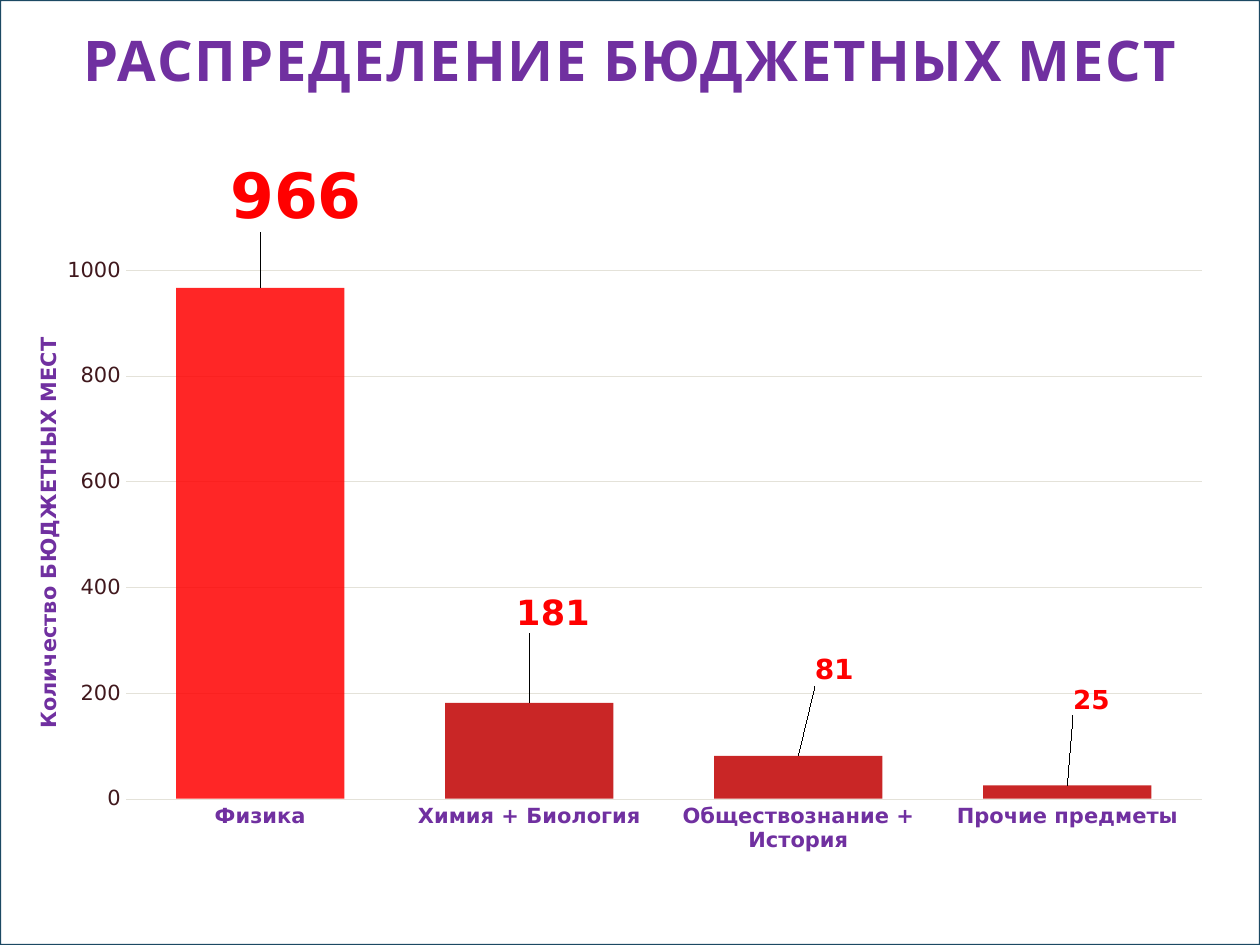
import pptx
import pptx.chart.data
import pptx.dml.color
import pptx.enum.chart
import pptx.enum.dml
import pptx.enum.shapes
import pptx.enum.text
import pptx.oxml
import pptx.oxml.ns
import pptx.util

RGBColor = pptx.dml.color.RGBColor
WHITE = RGBColor(0xFF, 0xFF, 0xFF)
NAVY = RGBColor(0x04, 0x36, 0x53)
PURPLE = RGBColor(0x70, 0x30, 0xA0)
RED = RGBColor(0xFF, 0x00, 0x00)
DARK_RED = RGBColor(0xC0, 0x00, 0x00)
BROWN = RGBColor(0x6D, 0x52, 0x25)
MAROON = RGBColor(0x40, 0x18, 0x1D)
INK = RGBColor(0x2E, 0x2B, 0x21)
GRID = RGBColor(0xE4, 0xE2, 0xD9)

TITLE_FONT = "Cabin"
CHART_FONT = "DejaVu Sans"
PX = pptx.util.Inches(1) // 126
PLOT_AREA = {"x": 0.08, "y": 0.07, "w": 0.9, "h": 0.81}
SUBJECTS = [
    ("Физика", 966, RED, 36, 0.03, -0.07),
    ("Химия + Биология", 181, DARK_RED, 20, 0.02, -0.09),
    ("Обществознание + История", 81, DARK_RED, 16, 0.03, -0.09),
    ("Прочие предметы", 25, DARK_RED, 15, 0.02, -0.09),
]


def place(shape, left, top, width, height):
    """Position a shape in px."""
    box = {"left": left, "top": top, "width": width, "height": height}
    for name, value in box.items():
        setattr(shape, name, value * PX)


def style_font(font, size, color, name=CHART_FONT, bold=False):
    """Apply size, colour, typeface and weight to a font."""
    values = {"size": pptx.util.Pt(size), "name": name, "bold": bold}
    for attribute, value in values.items():
        setattr(font, attribute, value)
    font.color.rgb = color


def paint(fill, color, opacity=100):
    """Give a fill a solid colour with an opacity in percent."""
    fill.solid()
    fill.fore_color.rgb = color
    if opacity < 100:
        set_opacity(fill.fore_color, fill, opacity)


def set_opacity(color, fill, opacity):
    """Add an alpha value to a solid colour."""
    holder = fill._xPr.find(".//" + pptx.oxml.ns.qn("a:srgbClr"))
    alpha = pptx.oxml.parse_xml(
        f'<a:alpha {pptx.oxml.ns.nsdecls("a")} val="{opacity * 1000}"/>')
    holder.append(alpha)


def manual_layout(values, modes):
    """Build a chart layout element from fractions of the chart."""
    parts = "".join(f'<c:{name} val="{value}"/>'
                    for name, value in [*modes.items(), *values.items()])
    return pptx.oxml.parse_xml(
        f'<c:layout {pptx.oxml.ns.nsdecls("c")}>'
        f"<c:manualLayout>{parts}</c:manualLayout></c:layout>")


def add_frame(slide, title):
    """Draw the outlined background behind the title."""
    frame = slide.shapes.add_shape(
        pptx.enum.shapes.MSO_SHAPE.RECTANGLE, 0, 0, 1260 * PX, 945 * PX)
    frame.shadow.inherit = False
    paint(frame.fill, WHITE)
    frame.line.width = pptx.util.Pt(1.25)
    paint(frame.line.fill, NAVY, 90)
    title.element.addprevious(frame.element)


def format_title(title, text):
    """Write and style the slide title."""
    place(title, 16, 19, 1228, 81)
    frame = title.text_frame
    frame.word_wrap = True
    frame.auto_size = pptx.enum.text.MSO_AUTO_SIZE.SHAPE_TO_FIT_TEXT
    paragraph = frame.paragraphs[0]
    paragraph.alignment = pptx.enum.text.PP_ALIGN.CENTER
    run = paragraph.add_run()
    run.text = text
    style_font(run.font, 32, PURPLE, TITLE_FONT, True)
    run.font._element.set("spc", "100")


def format_axis(axis, color, bold):
    """Hide an axis line and its ticks, and style its labels."""
    none = pptx.enum.chart.XL_TICK_MARK.NONE
    for name in ("major_tick_mark", "minor_tick_mark"):
        setattr(axis, name, none)
    axis.format.line.fill.background()
    style_font(axis.tick_labels.font, 12, color, bold=bold)


def format_value_axis(axis):
    """Set the scale, gridlines and title of the value axis."""
    format_axis(axis, MAROON, False)
    scale = {"minimum_scale": 0, "maximum_scale": 1100, "major_unit": 200}
    for name, value in scale.items():
        setattr(axis, name, value)
    line = axis.major_gridlines.format.line
    line.width = pptx.util.Pt(0.1)
    line.color.rgb = GRID
    paragraph = axis.axis_title.text_frame.paragraphs[0]
    run = paragraph.add_run()
    run.text = "Количество БЮДЖЕТНЫХ МЕСТ"
    style_font(run.font, 12, PURPLE, bold=True)


def format_points(series):
    """Colour each bar and move its value label."""
    paint(series.format.fill, BROWN, 85)
    labels = series.data_labels
    labels.show_value = True
    style_font(labels.font, 15, RED, bold=True)
    for index, (_, _, color, size, x, y) in enumerate(SUBJECTS):
        point = series.points[index]
        paint(point.format.fill, color, 85)
        label = point.data_label
        style_font(label.font, size, RED, bold=True)
        label.position = pptx.enum.chart.XL_LABEL_POSITION.OUTSIDE_END
        element = labels._element.findall(pptx.oxml.ns.qn("c:dLbl"))[index]
        element.insert(1, manual_layout({"x": x, "y": y}, {}))


def add_places_chart(slide):
    """Add the column chart of places by subject."""
    data = pptx.chart.data.CategoryChartData()
    data.categories = [subject[0] for subject in SUBJECTS]
    data.add_series("Series 1", [subject[1] for subject in SUBJECTS])
    kind = pptx.enum.chart.XL_CHART_TYPE.COLUMN_CLUSTERED
    graphic = slide.shapes.add_chart(kind, 0, 0, PX, PX, data)
    place(graphic, 30, 160, 1196, 725)
    chart = graphic.chart
    chart.has_legend = False
    chart.has_title = False
    style_font(chart.font, 10, INK, TITLE_FONT)
    plot = chart.plots[0]
    plot.gap_width = 60
    plot.vary_by_categories = False
    format_axis(chart.category_axis, PURPLE, True)
    format_value_axis(chart.value_axis)
    format_points(plot.series[0])
    area = chart._chartSpace.chart.plotArea
    for layout in area.findall(pptx.oxml.ns.qn("c:layout")):
        area.remove(layout)
    modes = {"layoutTarget": "inner", "xMode": "edge", "yMode": "edge"}
    area.insert(0, manual_layout(PLOT_AREA, modes))


def main():
    """Build and save the slide."""
    presentation = pptx.Presentation()
    presentation.slide_width = 1260 * PX
    presentation.slide_height = 945 * PX
    slide = presentation.slides.add_slide(presentation.slide_layouts[5])
    title = slide.shapes.title
    add_frame(slide, title)
    format_title(title, "РАСПРЕДЕЛЕНИЕ БЮДЖЕТНЫХ МЕСТ")
    add_places_chart(slide)
    presentation.save("out.pptx")


if __name__ == "__main__":
    main()
